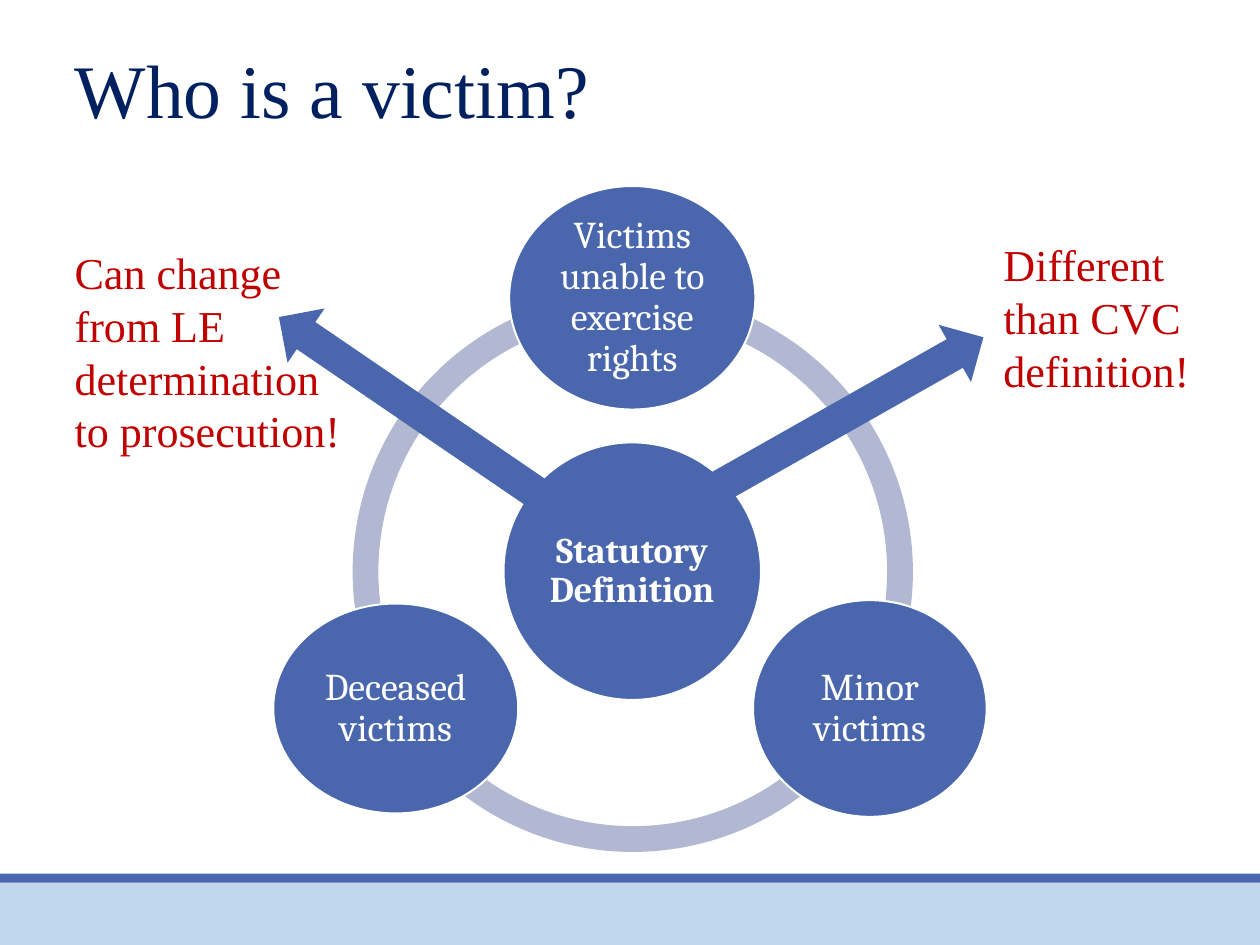
from dataclasses import dataclass
from typing import Any, NamedTuple, Optional

import pptx
import pptx.dml.color
import pptx.enum.shapes
import pptx.enum.text
import pptx.util

PX = 9144
SHAPE = pptx.enum.shapes.MSO_SHAPE
ANCHOR = pptx.enum.text.MSO_ANCHOR
ALIGN = pptx.enum.text.PP_ALIGN
AUTO_SIZE = pptx.enum.text.MSO_AUTO_SIZE


@dataclass(frozen=True)
class Theme:
    blue: str = "4A66AC"
    pale_blue: str = "C0D7EC"
    ring: str = "B2B8D2"
    navy: str = "002060"
    red: str = "C00000"
    white: str = "FFFFFF"
    serif: str = "Times New Roman"
    diagram_font: str = "Cambria"
    title_size: int = 48
    note_size: int = 28
    group_size: int = 24
    core_size: int = 23
    outline: float = 1.25


THEME = Theme()


class Box(NamedTuple):
    left: int
    top: int
    width: int
    height: int


class Circle(NamedTuple):
    text: str
    box: Box
    size: int = THEME.group_size
    bold: bool = False


class Arrow(NamedTuple):
    box: Box
    rotation: float


class Note(NamedTuple):
    text: str
    box: Box


RING = Box(311, 257, 494, 494)
RING_THICKNESS = 0.046
RING_STOPS = (18, 90, 162)
ANGLE_UNIT = 0.6

BANDS = (
    (Box(0, 778, 1111, 55), THEME.pale_blue),
    (Box(0, 770, 1111, 8), THEME.blue),
)
CIRCLES = (
    Circle("Statutory Definition", Box(444, 390, 227, 227), THEME.core_size, True),
    Circle("Victims unable to exercise rights", Box(449, 164, 217, 197)),
    Circle("Minor victims", Box(664, 529, 206, 191)),
    Circle("Deceased victims", Box(241, 532, 216, 185)),
)
ARROWS = (
    Arrow(Box(610, 336, 275, 58), 330.5),
    Arrow(Box(222, 328, 275, 58), 214.3),
)
NOTES = (
    Note("Can change from LE determination to prosecution!", Box(56, 211, 268, 199)),
    Note("Different than CVC definition!", Box(875, 204, 230, 151)),
)


def rgb(colour: str) -> pptx.dml.color.RGBColor:
    return pptx.dml.color.RGBColor.from_string(colour)


def emu(box: Box) -> list[int]:
    return [length * PX for length in box]


def apply(target: Any, values: dict[str, Any]) -> None:
    for name, value in values.items():
        setattr(target, name, value)


def add_filled(slide: Any, kind: Any, box: Box, fill: str, outline: Optional[str] = None) -> Any:
    shape = slide.shapes.add_shape(kind, *emu(box))
    shape.shadow.inherit = False
    shape.fill.solid()
    shape.fill.fore_color.rgb = rgb(fill)
    if outline:
        shape.line.color.rgb = rgb(outline)
        shape.line.width = pptx.util.Pt(THEME.outline)
    else:
        shape.line.fill.background()
    return shape


def write(
    frame: Any,
    text: str,
    font: dict[str, Any],
    colour: str,
    paragraph_format: dict[str, Any],
    frame_format: dict[str, Any],
) -> None:
    frame.text = text
    paragraph = frame.paragraphs[0]
    apply(frame, {"word_wrap": True, **frame_format})
    apply(paragraph, paragraph_format)
    run_font = paragraph.runs[0].font
    apply(run_font, font)
    run_font.color.rgb = rgb(colour)


def add_title(slide: Any, text: str, box: Box) -> None:
    title = slide.shapes.title
    apply(title, dict(zip(box._fields, emu(box))))
    write(
        title.text_frame, text,
        {"name": THEME.serif, "size": pptx.util.Pt(THEME.title_size)}, THEME.navy,
        {"alignment": ALIGN.LEFT},
        {"vertical_anchor": ANCHOR.TOP, "auto_size": AUTO_SIZE.NONE},
    )


def add_ring(slide: Any) -> None:
    for start, end in zip(RING_STOPS, RING_STOPS[1:] + RING_STOPS[:1]):
        arc = add_filled(slide, SHAPE.BLOCK_ARC, RING, THEME.ring)
        values = (start * ANGLE_UNIT, end * ANGLE_UNIT, RING_THICKNESS)
        for index, value in enumerate(values):
            arc.adjustments[index] = value


def add_circle(slide: Any, circle: Circle) -> None:
    shape = add_filled(slide, SHAPE.OVAL, circle.box, THEME.blue, THEME.white)
    margins = {f"margin_{side}": 3 * PX for side in ("left", "top", "right", "bottom")}
    write(
        shape.text_frame, circle.text,
        {"name": THEME.diagram_font, "size": pptx.util.Pt(circle.size), "bold": circle.bold},
        THEME.white,
        {"alignment": ALIGN.CENTER, "line_spacing": 0.9},
        {"vertical_anchor": ANCHOR.MIDDLE, **margins},
    )


def add_arrow(slide: Any, arrow: Arrow) -> None:
    shape = add_filled(slide, SHAPE.RIGHT_ARROW, arrow.box, THEME.blue)
    shape.rotation = arrow.rotation


def add_note(slide: Any, note: Note) -> None:
    write(
        slide.shapes.add_textbox(*emu(note.box)).text_frame, note.text,
        {"name": THEME.serif, "size": pptx.util.Pt(THEME.note_size)}, THEME.red,
        {"alignment": ALIGN.LEFT},
        {"auto_size": AUTO_SIZE.SHAPE_TO_FIT_TEXT},
    )


def main() -> None:
    deck = pptx.Presentation()
    apply(deck, {"slide_width": 1111 * PX, "slide_height": 833 * PX})
    slide = deck.slides.add_slide(deck.slide_layouts.get_by_name("Title Only"))
    add_title(slide, "Who is a victim?", Box(56, 33, 875, 91))
    for box, colour in BANDS:
        add_filled(slide, SHAPE.RECTANGLE, box, colour)
    add_ring(slide)
    for circle in CIRCLES:
        add_circle(slide, circle)
    for arrow in ARROWS:
        add_arrow(slide, arrow)
    for note in NOTES:
        add_note(slide, note)
    deck.save("out.pptx")


if __name__ == "__main__":
    main()
